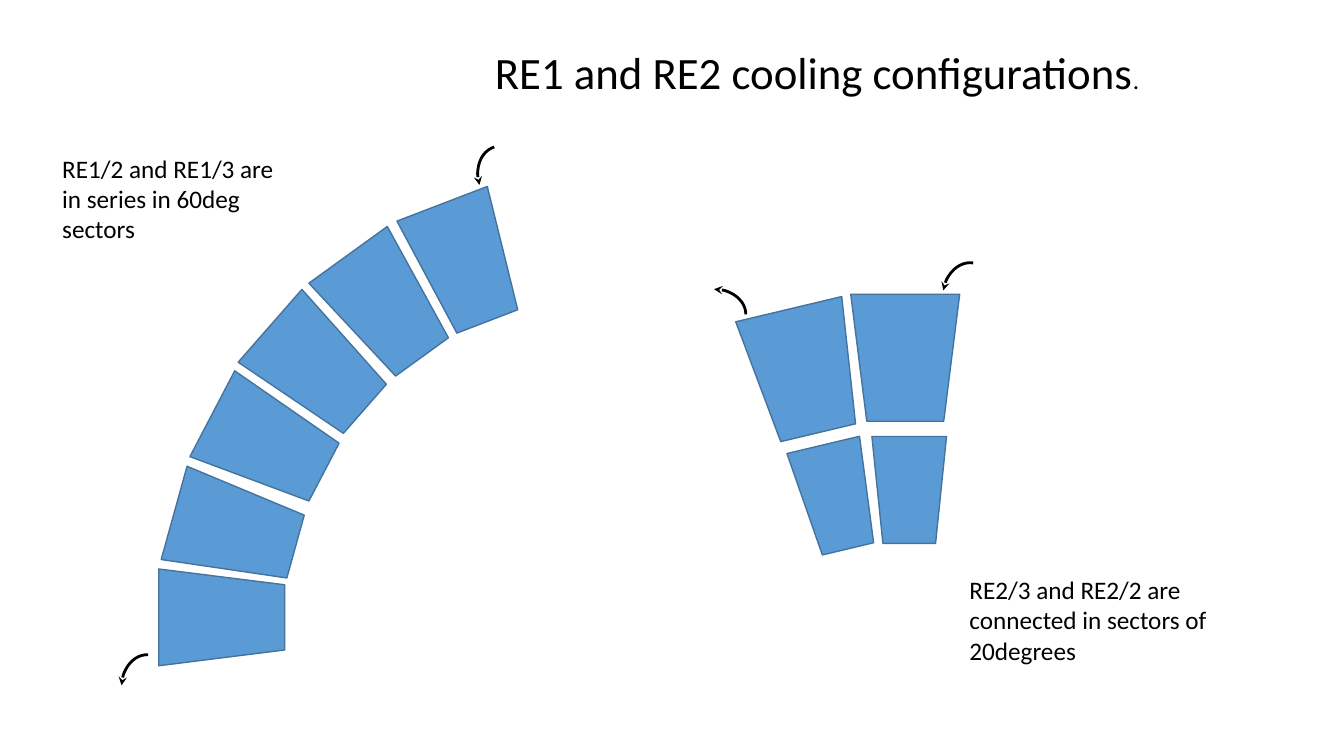
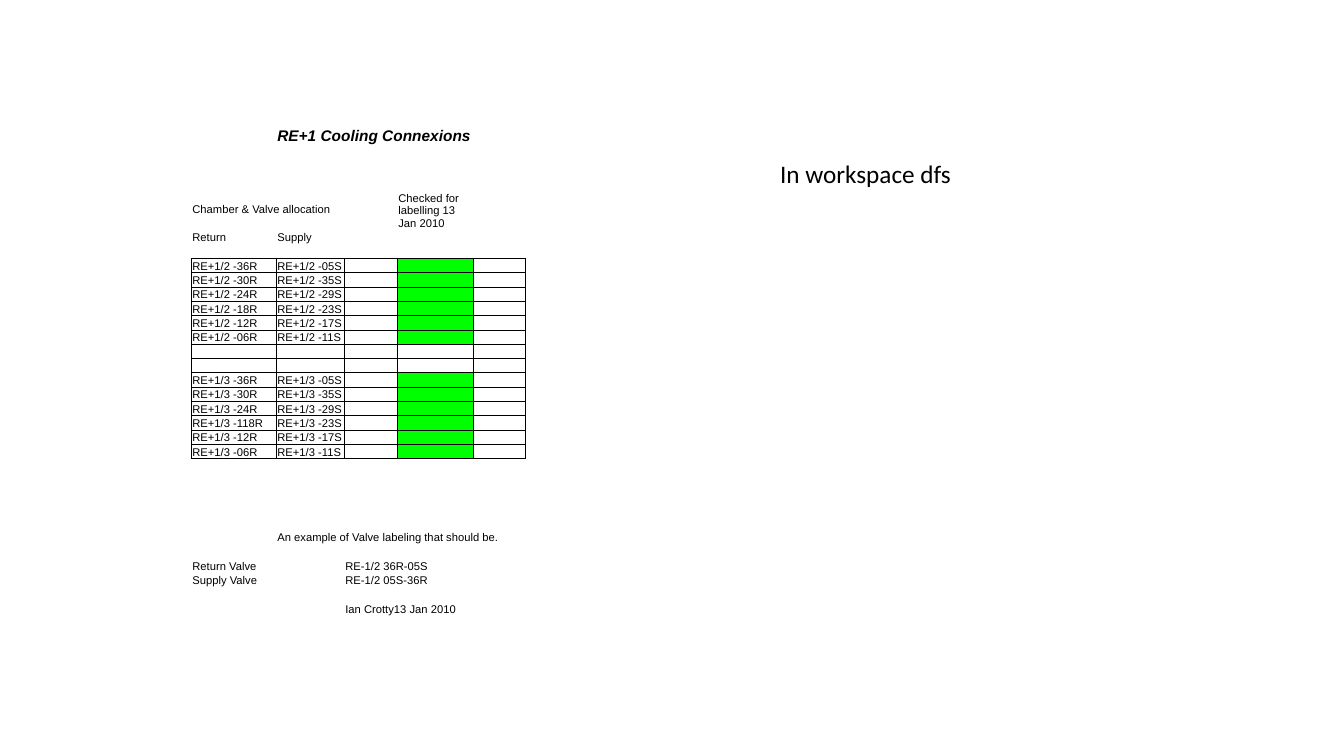
from lxml.etree import SubElement
from pptx import Presentation
from pptx.dml.color import RGBColor
from pptx.enum.shapes import MSO_SHAPE as Shape
from pptx.enum.text import MSO_ANCHOR as Anchor, PP_ALIGN as Align
from pptx.oxml import parse_xml
from pptx.oxml.ns import nsdecls, qn
from pptx.util import Pt

COLOURS = {"text": "000000", "sector": "5B9BD5", "edge": "43739E", "checked": "00FF00"}
BODY_FONT, TABLE_FONT = "Calibri", "Arial"
TITLE_ONLY, BLANK = 5, 6
NO_TABLE_STYLE = "{2D5ABB26-0587-4C30-8999-92F81FD0307C}"

# Cooling sectors: left, top, rotation
RE1_SIZE, RE1_TAPER = (69.1, 90), 0.163
RE1_SECTORS = [(123.8, 396, 90), (133.2, 333.4, 105.5), (157, 271.4, 117.6),
               (192.2, 217.4, 131.2), (240.5, 173.5, 144.1), (297.4, 142.6, 159)]
RE2_OUTER_SIZE, RE2_INNER_SIZE, RE2_TAPER = (77.8, 90.7), (53.3, 76.3), 0.147
RE2_OUTER = [(535, 219.6, 166.6), (607.7, 210.2, 180)]
RE2_INNER = [(570.2, 316.8, 166.6), (622.8, 311.8, 180)]
FLOW_SIZE = (45.4, 36)
FLOW_ARROWS = [(487.4, 206.6, 0), (668.9, 192.2, 279.1),
               (82.1, 472.3, 272.7), (337, 108.7, 252.9)]

# Valve table
COLUMN_WIDTHS = [60.7, 48.6, 37.9, 54.3, 37.1]
ROW_COUNT, TITLE_HEIGHT, ROW_HEIGHT = 34, 14.4, 10.2
GRID_ROWS = range(9, 23)
CHECKED_COLUMN = 3
SUPPLIES = ["05", "35", "29", "23", "17", "11"]
# First row, ring and return valves of each group
VALVE_GROUPS = [(9, "RE+1/2", ["36", "30", "24", "18", "12", "06"]),
                (17, "RE+1/3", ["36", "30", "24", "118", "12", "06"])]
# Row, column, rows spanned, columns spanned, text
LABELS = [(0, 1, 1, 4, "RE+1 Cooling Connexions"),
          (4, 3, 3, 1, "Checked for labelling 13 Jan 2010"),
          (5, 0, 1, 2, "Chamber & Valve allocation"),
          (7, 0, 1, 1, "Return"),
          (7, 1, 1, 1, "Supply"),
          (28, 1, 1, 4, "An example of Valve labeling that should be."),
          (30, 0, 1, 1, "Return Valve"),
          (30, 2, 1, 2, "RE-1/2 36R-05S"),
          (31, 0, 1, 1, "Supply Valve"),
          (31, 2, 1, 2, "RE-1/2 05S-36R"),
          (33, 2, 1, 2, "Ian Crotty13 Jan 2010")]


def colour(name):
    return RGBColor.from_string(COLOURS[name])


def format_run(run, size, font=BODY_FONT, emphasis=False):
    run.font.name, run.font.size = font, Pt(size)
    run.font.bold = run.font.italic = emphasis
    run.font.color.rgb = colour("text")


def set_title(slide, box, text, ending):
    title = slide.shapes.title
    title.left, title.top, title.width, title.height = map(Pt, box)
    frame = title.text_frame
    frame.vertical_anchor, frame.word_wrap = Anchor.TOP, True
    paragraph = frame.paragraphs[0]
    paragraph.alignment, paragraph.line_spacing = Align.LEFT, 1.0
    for part, size in ((text, 32), (ending, 18)):
        run = paragraph.add_run()
        run.text = part
        format_run(run, size)


def add_text(slide, box, text):
    frame = slide.shapes.add_textbox(*map(Pt, box)).text_frame
    frame.word_wrap = True
    frame.text = text
    format_run(frame.paragraphs[0].runs[0], 18)


def add_rotated(slide, kind, place, size, line_colour, line_width):
    left, top, rotation = place
    shape = slide.shapes.add_shape(kind, *map(Pt, (left, top, *size)))
    shape.rotation = rotation
    shape.shadow.inherit = False
    shape.line.color.rgb = colour(line_colour)
    shape.line.width = Pt(line_width)
    return shape


def add_sectors(slide, places, size, taper):
    for place in places:
        sector = add_rotated(slide, Shape.TRAPEZOID, place, size, "edge", 1)
        sector.adjustments[0] = taper
        sector.fill.solid()
        sector.fill.fore_color.rgb = colour("sector")


def add_flow_arrow(slide, place):
    arrow = add_rotated(slide, Shape.ARC, place, FLOW_SIZE, "text", 2)
    arrow.fill.background()
    SubElement(arrow.line._get_or_add_ln(), qn("a:headEnd"), type="stealth")


def add_borders(cell):
    # Borders come before the fill in the cell properties
    for position, side in enumerate(("lnL", "lnR", "lnT", "lnB")):
        border = parse_xml(
            f'<a:{side} {nsdecls("a")} w="{Pt(0.5)}"><a:solidFill>'
            f'<a:srgbClr val="{COLOURS["text"]}"/></a:solidFill></a:{side}>')
        cell._tc.get_or_add_tcPr().insert(position, border)


def prepare_cell(cell):
    cell.margin_left = cell.margin_right = cell.margin_top = Pt(0.6)
    cell.margin_bottom = 0
    cell.vertical_anchor = Anchor.BOTTOM
    cell.fill.background()
    # Small end mark, so that empty rows stay low
    SubElement(cell.text_frame.paragraphs[0]._p, qn("a:endParaRPr"), sz="800")


def write_cell(cell, text, size=8, emphasis=False):
    paragraph = cell.text_frame.paragraphs[0]
    paragraph.text = text
    format_run(paragraph.runs[0], size, TABLE_FONT, emphasis)


def add_valve_table(slide, left, top):
    height = TITLE_HEIGHT + (ROW_COUNT - 1) * ROW_HEIGHT
    table_frame = slide.shapes.add_table(
        ROW_COUNT, len(COLUMN_WIDTHS), Pt(left), Pt(top), Pt(sum(COLUMN_WIDTHS)), Pt(height))
    table = table_frame.table
    table.first_row = table.horz_banding = False
    table._tbl.tblPr.find(qn("a:tableStyleId")).text = NO_TABLE_STYLE
    for column, width in zip(table.columns, COLUMN_WIDTHS):
        column.width = Pt(width)
    for index, row in enumerate(table.rows):
        row.height = Pt(ROW_HEIGHT if index else TITLE_HEIGHT)
        for cell in row.cells:
            prepare_cell(cell)
            if index in GRID_ROWS:
                add_borders(cell)

    # Headings and example
    for row, column, row_span, column_span, text in LABELS:
        cell = table.cell(row, column)
        if row_span * column_span > 1:
            cell.merge(table.cell(row + row_span - 1, column + column_span - 1))
        write_cell(cell, text, 8 if row else 11, row == 0)

    # Valve pairs
    for first_row, ring, returns in VALVE_GROUPS:
        for row, (return_valve, supply) in enumerate(zip(returns, SUPPLIES), first_row):
            write_cell(table.cell(row, 0), f"{ring} -{return_valve}R")
            write_cell(table.cell(row, 1), f"{ring} -{supply}S")
            checked = table.cell(row, CHECKED_COLUMN)
            checked.fill.solid()
            checked.fill.fore_color.rgb = colour("checked")


def build_configurations(presentation):
    slide = presentation.slides.add_slide(presentation.slide_layouts[TITLE_ONLY])
    set_title(slide, (346.3, 28.1, 481.7, 46.1), "RE1 and RE2 cooling configurations", ".")
    add_sectors(slide, RE1_SECTORS, RE1_SIZE, RE1_TAPER)
    add_sectors(slide, RE2_OUTER, RE2_OUTER_SIZE, RE2_TAPER)
    add_sectors(slide, RE2_INNER, RE2_INNER_SIZE, RE2_TAPER)
    for place in FLOW_ARROWS:
        add_flow_arrow(slide, place)
    add_text(slide, (37.4, 105.8, 172.8, 72.7),
             "RE1/2 and RE1/3 are in series in 60deg sectors")
    add_text(slide, (685.4, 406.8, 238.3, 72.7),
             "RE2/3 and RE2/2 are connected in sectors of 20degrees")


def build_connexions(presentation):
    slide = presentation.slides.add_slide(presentation.slide_layouts[BLANK])
    add_valve_table(slide, 136.8, 88.6)
    add_text(slide, (550.1, 109.4, 262.8, 28.8), "In workspace dfs")


def main():
    presentation = Presentation()
    presentation.slide_width, presentation.slide_height = Pt(960), Pt(540)
    build_configurations(presentation)
    build_connexions(presentation)
    presentation.save("out.pptx")


if __name__ == "__main__":
    main()
